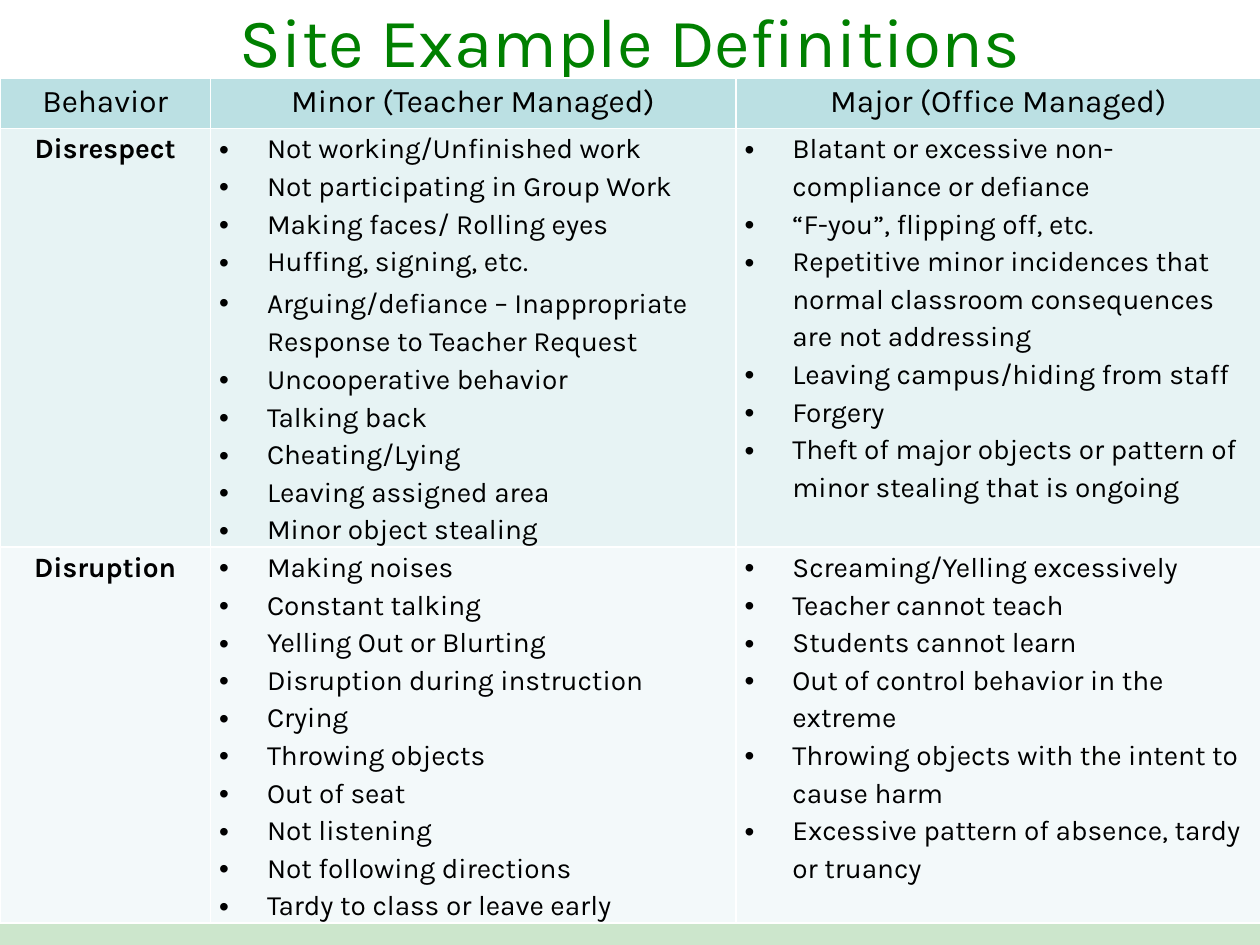
"""Build a slide with a table of minor and major behavior definitions."""
from lxml.etree import SubElement
from pptx import Presentation
from pptx.dml.color import RGBColor
from pptx.enum.text import MSO_ANCHOR as Anchor, PP_ALIGN as Align
from pptx.oxml.ns import qn
from pptx.util import Inches, Pt

FONT = "Karla"
GREEN = RGBColor(0x00, 0x80, 0x00)
PALE_GREEN = RGBColor(0xCC, 0xE6, 0xCC)
WHITE = RGBColor(0xFF, 0xFF, 0xFF)
BLACK = RGBColor(0x00, 0x00, 0x00)
ROW_FILLS = [
    RGBColor(0xBB, 0xE0, 0xE3),
    RGBColor(0xE7, 0xF3, 0xF4),
    RGBColor(0xF3, 0xF9, 0xFA),
]
COLUMN_WIDTHS = [1.67, 4.17, 4.17]
ROW_HEIGHTS = [0.4, 3.32, 2.98]
HEADINGS = ["Behavior", "Minor (Teacher Managed)", "Major (Office Managed)"]
DISRESPECT_MINOR = [
    "Not working/Unfinished work",
    "Not participating in Group Work",
    "Making faces/ Rolling eyes",
    "Huffing, signing, etc.",
    ("Arguing/defiance – Inappropriate", " ", "Response to Teacher Request"),
    "Uncooperative behavior",
    "Talking back",
    "Cheating/Lying",
    "Leaving assigned area",
    "Minor object stealing",
]
DISRESPECT_MAJOR = [
    "Blatant or excessive non-compliance or defiance",
    "“F-you”, flipping off, etc.",
    "Repetitive minor incidences that normal classroom consequences are not addressing",
    "Leaving campus/hiding from staff",
    "Forgery",
    "Theft of major objects or pattern of minor stealing that is ongoing",
]
DISRUPTION_MINOR = [
    "Making noises",
    "Constant talking",
    "Yelling Out or Blurting",
    "Disruption during instruction",
    "Crying",
    "Throwing objects",
    "Out of seat",
    "Not listening",
    "Not following directions",
    "Tardy to class or leave early",
]
DISRUPTION_MAJOR = [
    "Screaming/Yelling excessively",
    "Teacher cannot teach",
    "Students cannot learn",
    "Out of control behavior in the extreme",
    "Throwing objects with the intent to cause harm",
    "Excessive pattern of absence, tardy or truancy",
]
ROWS = [
    [[heading] for heading in HEADINGS],
    [["Disrespect"], DISRESPECT_MINOR, DISRESPECT_MAJOR],
    [["Disruption"], DISRUPTION_MINOR, DISRUPTION_MAJOR],
]
CELL_FORMAT = {
    "margin_left": Inches(0.07),
    "margin_right": Inches(0.07),
    "margin_top": 0,
    "margin_bottom": 0,
    "vertical_anchor": Anchor.TOP,
}


def add_span(para, text, size, color, bold=False):
    span = para.add_run()
    span.text = text
    values = {"name": FONT, "size": Pt(size), "bold": bold}
    for name, value in values.items():
        setattr(span.font, name, value)
    span.font.color.rgb = color


def style_cell(cell, color):
    for name, value in CELL_FORMAT.items():
        setattr(cell, name, value)
    properties = cell._tc.get_or_add_tcPr()
    for side in ("a:lnL", "a:lnR", "a:lnT", "a:lnB"):
        line = SubElement(properties, qn(side), w=str(Pt(1)))
        SubElement(SubElement(line, qn("a:solidFill")), qn("a:srgbClr"), val=str(WHITE))
    cell.fill.solid()
    cell.fill.fore_color.rgb = color


deck = Presentation()
deck.slide_width, deck.slide_height = Inches(10), Inches(7.5)
page = deck.slides.add_slide(deck.slide_layouts[5])
page.background.fill.solid()
page.background.fill.fore_color.rgb = PALE_GREEN

title = page.shapes.title
title_format = {
    "left": 0,
    "top": Inches(-0.05),
    "width": Inches(10),
    "height": Inches(0.73),
}
for name, value in title_format.items():
    setattr(title, name, value)
title.fill.solid()
title.fill.fore_color.rgb = WHITE
title.text_frame.vertical_anchor = Anchor.MIDDLE
title_para = title.text_frame.paragraphs[0]
title_para.alignment = Align.CENTER
add_span(title_para, "Site Example Definitions", 39.6, GREEN)

table = page.shapes.add_table(
    len(ROWS), len(HEADINGS), 0, Inches(0.62), Inches(10), Inches(sum(ROW_HEIGHTS))
).table
for column, width in zip(table.columns, COLUMN_WIDTHS):
    column.width = Inches(width)
for row, height in zip(table.rows, ROW_HEIGHTS):
    row.height = Inches(height)

for row_index, row_items in enumerate(ROWS):
    is_header = row_index == 0
    for column_index, items in enumerate(row_items):
        cell = table.cell(row_index, column_index)
        style_cell(cell, ROW_FILLS[row_index])
        is_list = not is_header and column_index > 0
        is_label = not is_header and column_index == 0
        for item_index, item in enumerate(items):
            frame = cell.text_frame
            para = frame.paragraphs[0] if item_index == 0 else frame.add_paragraph()
            para.alignment = Align.LEFT if is_list else Align.CENTER
            para.line_spacing = 1.15
            if is_list:
                settings = para._p.get_or_add_pPr()
                settings.set("marL", str(Inches(0.38)))
                settings.set("indent", str(Inches(-0.38)))
                SubElement(settings, qn("a:buFont"), typeface="Arial")
                SubElement(settings, qn("a:buChar"), char="•")
            for text in item if isinstance(item, tuple) else (item,):
                size = 18 if is_header or text == " " else 16
                add_span(para, text, size, BLACK, is_label)

deck.save("out.pptx")
